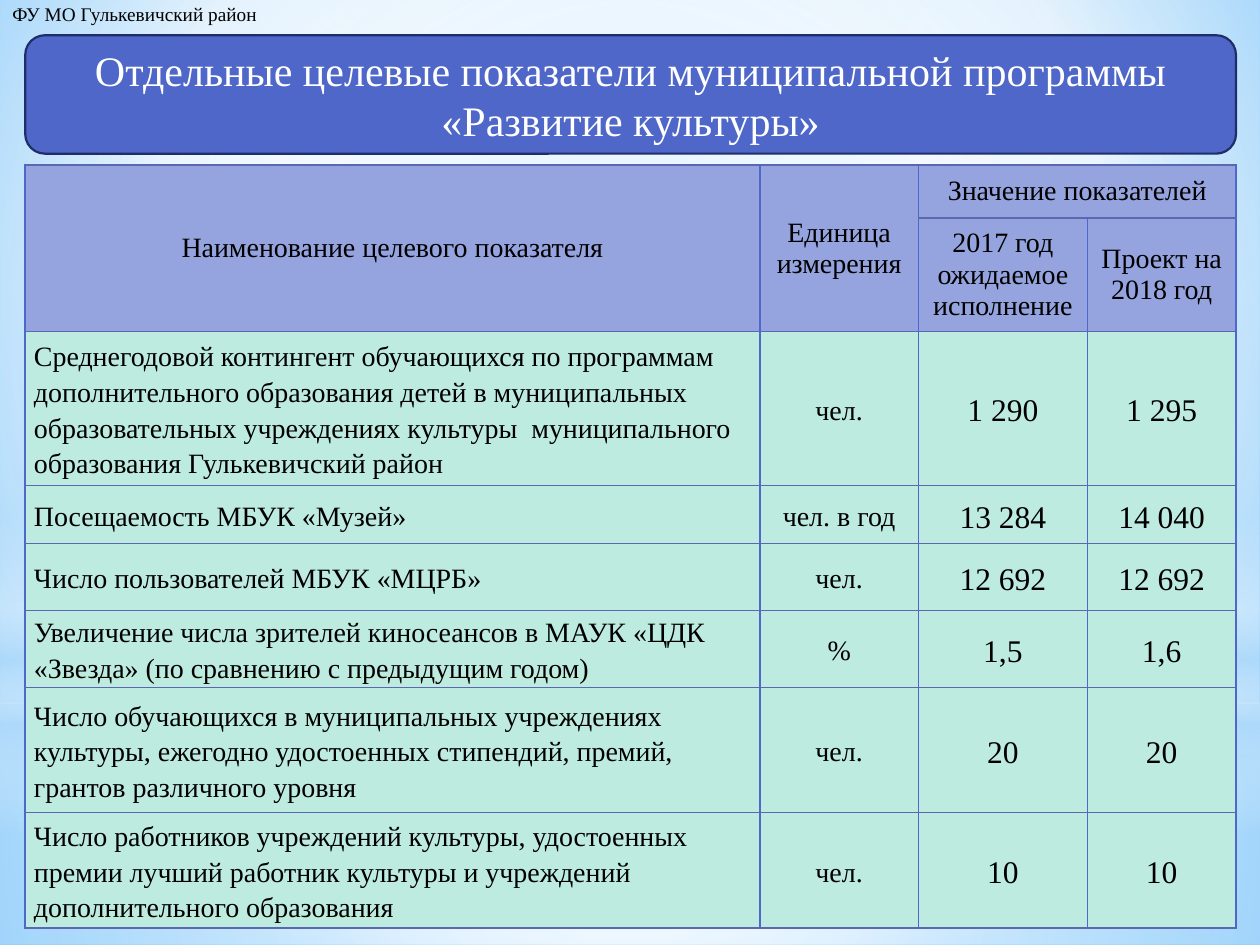
from lxml.etree import SubElement
from pptx import Presentation
from pptx.dml.color import RGBColor
from pptx.enum.shapes import MSO_SHAPE as SHAPE
from pptx.enum.text import MSO_ANCHOR as ANCHOR, PP_ALIGN as ALIGN
from pptx.oxml.ns import qn
from pptx.util import Inches, Pt

BLACK = RGBColor(0, 0, 0)
WHITE = RGBColor(0xFF, 0xFF, 0xFF)
BLUE = RGBColor(0x4E, 0x67, 0xC8)
NAVY = RGBColor(0x1F, 0x2E, 0x69)
HEADER = RGBColor(0x95, 0xA4, 0xDE)
MINT = RGBColor(0xBE, 0xEB, 0xDF)
BORDER = RGBColor(0x59, 0x68, 0xB0)
SKY = RGBColor(0x9E, 0xD5, 0xFF)
DEEP_SKY = RGBColor(0x5B, 0xB9, 0xFF)
PALE_SKY = RGBColor(0xB4, 0xDC, 0xFA)
FONT = "Times New Roman"
CENTRE = (50, 50, 50, 50)

COLS = [5.83, 1.26, 1.34, 1.18]
ROWS = [0.42, 0.88, 1.2, 0.46, 0.53, 0.6, 0.99, 0.9]
HEADINGS = [
    (0, 0, 1, 0, ["Наименование целевого показателя"]),
    (0, 1, 1, 1, ["Единица", "измерения"]),
    (0, 2, 0, 3, ["Значение показателей"]),
    (1, 2, 1, 2, ["2017 год ожидаемое исполнение"]),
    (1, 3, 1, 3, ["Проект на 2018 год"]),
]
INDICATORS = [
    ("Среднегодовой контингент обучающихся по программам дополнительного "
     "образования детей в муниципальных образовательных учреждениях культуры  "
     "муниципального образования Гулькевичский район", "чел.", "1 290", "1 295"),
    ("Посещаемость МБУК «Музей»", "чел. в год", "13 284", "14 040"),
    ("Число пользователей МБУК «МЦРБ»", "чел.", "12 692", "12 692"),
    ("Увеличение числа зрителей киносеансов в МАУК «ЦДК «Звезда» "
     "(по сравнению с предыдущим годом)", "%", "1,5", "1,6"),
    ("Число обучающихся в муниципальных учреждениях культуры, ежегодно "
     "удостоенных стипендий, премий, грантов различного уровня",
     "чел.", "20", "20"),
    ("Число работников учреждений культуры, удостоенных премии лучший работник "
     "культуры и учреждений дополнительного образования", "чел.", "10", "10"),
]


def set_gradient(props, stops, focus=None):
    old = props.find(qn("a:solidFill"))
    grad = old.makeelement(qn("a:gradFill"), {"rotWithShape": "1"})
    props.replace(old, grad)
    stop_list = SubElement(grad, qn("a:gsLst"))
    for pos, color, alpha in stops:
        gs = SubElement(stop_list, qn("a:gs"), pos=str(pos * 1000))
        clr = SubElement(gs, qn("a:srgbClr"), val=str(color))
        if alpha < 100:
            SubElement(clr, qn("a:alpha"), val=str(alpha * 1000))
    if focus:
        shade = SubElement(grad, qn("a:path"), path="circle")
        sides = {k: str(v * 1000) for k, v in zip("ltrb", focus)}
        SubElement(shade, qn("a:fillToRect"), sides)
    else:
        SubElement(grad, qn("a:lin"), ang="5400000", scaled="0")


def add_panel(s, kind, box, color):
    sp = s.shapes.add_shape(kind, *map(Inches, box))
    sp.shadow.inherit = False
    sp.fill.solid()
    sp.fill.fore_color.rgb = color
    sp.line.fill.background()
    return sp


def add_text(p, text, size, color=BLACK, align=ALIGN.CENTER):
    p.alignment = align
    r = p.add_run()
    r.text = text
    r.font.size = Pt(size)
    r.font.name = FONT
    r.font.color.rgb = color


def add_backdrop(s, width, height):
    s.background.fill.solid()
    set_gradient(s.element.find(".//" + qn("p:bgPr")),
                 [(0, SKY, 100), (60, WHITE, 100), (100, DEEP_SKY, 100)],
                 (20, 10, 20, 60))
    horizon = 5.58
    layers = [
        (SHAPE.RECTANGLE, (0, horizon, width, height - horizon),
         [(0, WHITE, 91), (37, WHITE, 76), (100, PALE_SKY, 79)], CENTRE),
        (SHAPE.RECTANGLE, (0, 0, width, horizon),
         [(0, WHITE, 89), (48, WHITE, 62), (100, PALE_SKY, 79)], CENTRE),
        (SHAPE.RECTANGLE, (0, 4.12, width, 2.5),
         [(0, WHITE, 0), (29, WHITE, 30), (45, PALE_SKY, 40),
          (55, WHITE, 26), (65, PALE_SKY, 60), (100, WHITE, 0)], None),
        (SHAPE.OVAL, (0, 1.75, width, horizon),
         [(0, WHITE, 100), (56, WHITE, 0)], CENTRE),
    ]
    for kind, box, stops, focus in layers:
        sp = add_panel(s, kind, box, WHITE)
        set_gradient(sp.element.spPr, stops, focus)


def add_department(s, box):
    tf = s.shapes.add_textbox(*map(Inches, box)).text_frame
    tf.word_wrap = False
    add_text(tf.paragraphs[0], "ФУ МО Гулькевичский район", 11, align=ALIGN.LEFT)


def add_title(s, box):
    sp = add_panel(s, SHAPE.ROUNDED_RECTANGLE, box, BLUE)
    sp.line.color.rgb = NAVY
    sp.line.width = Pt(1.25)
    tf = sp.text_frame
    tf.word_wrap = True
    tf.vertical_anchor = ANCHOR.MIDDLE
    add_text(tf.paragraphs[0], "Отдельные целевые показатели муниципальной "
             "программы «Развитие культуры»", 24, WHITE)


def style_cell(cell, fill):
    cell.vertical_anchor = ANCHOR.MIDDLE
    props = cell._tc.get_or_add_tcPr()
    for side, color in (("L", BLUE), ("R", BLUE), ("T", BORDER), ("B", BORDER)):
        ln = SubElement(props, qn("a:ln" + side), w=str(Pt(1)))
        SubElement(SubElement(ln, qn("a:solidFill")), qn("a:srgbClr"), val=str(color))
    cell.fill.solid()
    cell.fill.fore_color.rgb = fill


def add_indicators(s, box):
    table = s.shapes.add_table(len(ROWS), len(COLS), *map(Inches, box)).table
    for col, width in zip(table.columns, COLS):
        col.width = Inches(width)
    for row, height in zip(table.rows, ROWS):
        row.height = Inches(height)
    for i in range(len(ROWS)):
        for j in range(len(COLS)):
            style_cell(table.cell(i, j), HEADER if i < 2 else MINT)

    for top, left, bottom, right, lines in HEADINGS:
        cell = table.cell(top, left)
        if (top, left) != (bottom, right):
            cell.merge(table.cell(bottom, right))
        tf = cell.text_frame
        for i, line in enumerate(lines):
            add_text(tf.add_paragraph() if i else tf.paragraphs[0], line, 16)

    for i, values in enumerate(INDICATORS, 2):
        for j, value in enumerate(values):
            cell = table.cell(i, j)
            cell.margin_left = cell.margin_right = Inches(0.07)
            cell.margin_top = cell.margin_bottom = 0
            p = cell.text_frame.paragraphs[0]
            p.line_spacing = 1.15
            add_text(p, value, 18 if j > 1 else 16,
                     align=ALIGN.CENTER if j else ALIGN.LEFT)


def main():
    prs = Presentation()
    prs.slide_width = Inches(10)
    prs.slide_height = Inches(7.5)
    s = prs.slides.add_slide(prs.slide_layouts[6])
    add_backdrop(s, 10, 7.5)
    add_department(s, (0, -0.03, 2.18, 0.29))
    add_indicators(s, (0.2, 1.31, sum(COLS), sum(ROWS)))
    add_title(s, (0.2, 0.28, sum(COLS), 0.94))
    prs.save("out.pptx")


if __name__ == "__main__":
    main()
